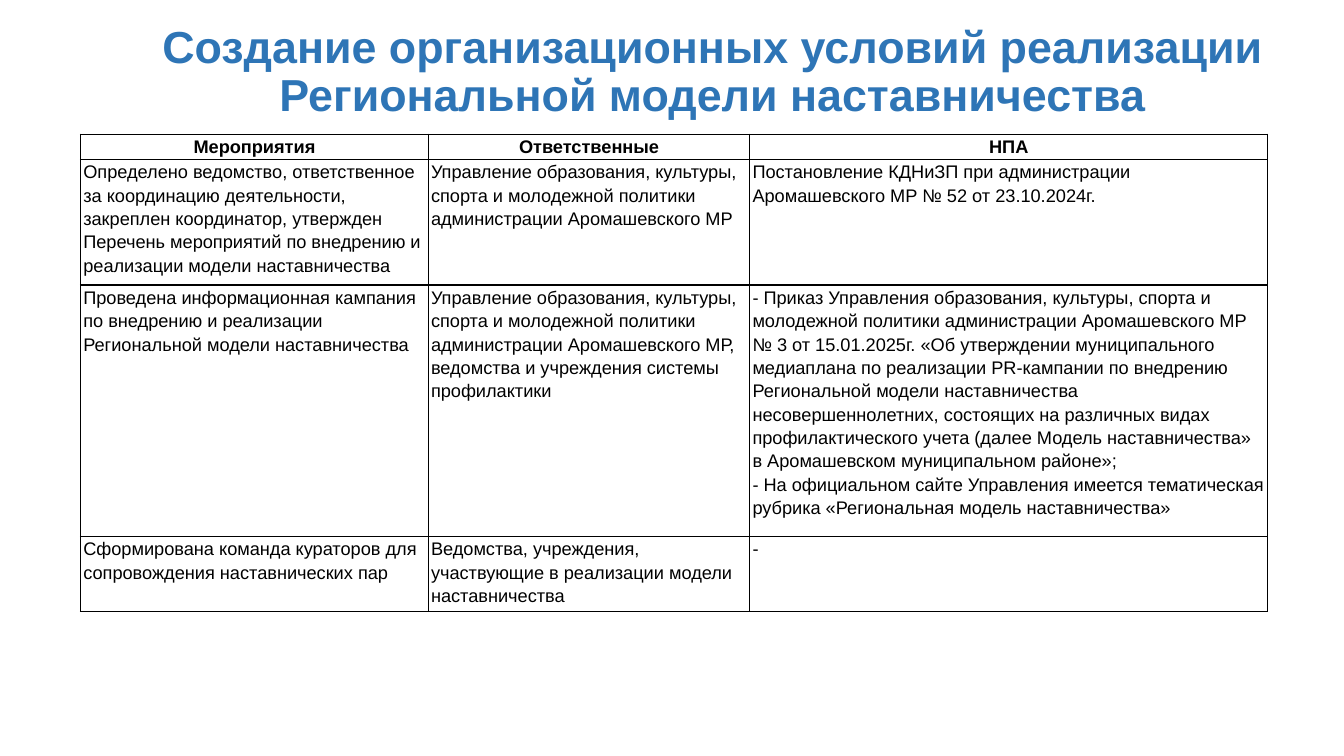
import pptx
import pptx.util
import pptx.dml.color
import pptx.enum.text
import pptx.oxml
import pptx.oxml.ns
from lxml import etree

Cm = pptx.util.Cm
Pt = pptx.util.Pt
ALIGN = pptx.enum.text.PP_ALIGN
ANCHOR = pptx.enum.text.MSO_ANCHOR

COLORS = {"title": "2E75B6", "text": "000000", "border": "000000"}
FONT = "Arial"

TITLE = "Создание организационных условий реализации Региональной модели наставничества"
HEADINGS = ["Мероприятия", "Ответственные", "НПА"]
MEASURES = [
    ["Определено ведомство, ответственное за координацию деятельности, закреплен "
     "координатор, утвержден Перечень мероприятий по внедрению и реализации "
     "модели наставничества",
     "Управление образования, культуры, спорта и молодежной политики "
     "администрации Аромашевского МР",
     "Постановление КДНиЗП при администрации Аромашевского МР № 52 от 23.10.2024г."],
    ["Проведена информационная кампания по внедрению и реализации "
     "Региональной модели наставничества",
     "Управление образования, культуры, спорта и молодежной политики администрации "
     "Аромашевского МР, ведомства и учреждения системы профилактики",
     "- Приказ Управления образования, культуры, спорта и молодежной политики "
     "администрации Аромашевского МР № 3 от 15.01.2025г. «Об утверждении "
     "муниципального медиаплана по реализации PR-кампании по внедрению Региональной "
     "модели наставничества несовершеннолетних, состоящих на различных видах "
     "профилактического учета (далее Модель наставничества» в Аромашевском "
     "муниципальном районе»;\n"
     "- На официальном сайте Управления имеется тематическая рубрика "
     "«Региональная модель наставничества»"],
    ["Сформирована команда кураторов для сопровождения наставнических пар",
     "Ведомства, учреждения, участвующие в реализации модели наставничества",
     "-"],
]
COLUMN_SHARES = [3.45, 3.19, 5.14]
ROW_HEIGHTS = [0.48, 1.88, 4.24, 0.94]  # minimum heights, rows grow with their text


def format_text(frame, size, color, bold, align, spacing):
    for paragraph in frame.paragraphs:
        paragraph.alignment = align
        paragraph.line_spacing = spacing
        for run in paragraph.runs:
            run.font.name = FONT
            run.font.size = Pt(size)
            run.font.bold = bold
            run.font.color.rgb = pptx.dml.color.RGBColor.from_string(color)


def add_borders(cell):
    properties = cell._tc.get_or_add_tcPr()
    qn = pptx.oxml.ns.qn
    for position, side in enumerate(("a:lnL", "a:lnR", "a:lnT", "a:lnB")):
        line = etree.Element(qn(side), w=str(Pt(1)))
        fill = etree.SubElement(line, qn("a:solidFill"))
        etree.SubElement(fill, qn("a:srgbClr"), val=COLORS["border"])
        properties.insert(position, line)


def add_title(slide, left, top, width, height):
    title = slide.shapes.add_textbox(Cm(left), Cm(top), Cm(width), Cm(height))
    frame = title.text_frame
    frame.word_wrap = True
    frame.vertical_anchor = ANCHOR.MIDDLE
    frame.text = TITLE
    format_text(frame, 32, COLORS["title"], True, ALIGN.CENTER, 0.9)


def add_measures(slide, left, top, width):
    rows = [HEADINGS] + MEASURES
    measures = slide.shapes.add_table(
        len(rows), len(HEADINGS), Cm(left), Cm(top), Cm(width), Cm(sum(ROW_HEIGHTS))
    ).table
    measures.horz_banding = False
    for column, share in zip(measures.columns, COLUMN_SHARES):
        column.width = Cm(width * share / sum(COLUMN_SHARES))
    for row, height in zip(measures.rows, ROW_HEIGHTS):
        row.height = Cm(height)

    for r, texts in enumerate(rows):
        heading = r == 0
        for c, text in enumerate(texts):
            cell = measures.cell(r, c)
            cell.margin_left = cell.margin_right = Cm(0.07)
            cell.margin_top = cell.margin_bottom = 0
            cell.vertical_anchor = ANCHOR.TOP
            cell.fill.background()
            cell.text_frame.text = text
            format_text(cell.text_frame, 13, COLORS["text"], heading,
                        ALIGN.CENTER if heading else ALIGN.LEFT, 1.15)
            add_borders(cell)


def main():
    deck = pptx.Presentation()
    deck.slide_width, deck.slide_height = Cm(33.87), Cm(19.05)
    slide = deck.slides.add_slide(deck.slide_layouts[6])

    # Heading
    add_title(slide, left=2.06, top=0, width=31.81, height=3.68)
    # Table of measures
    add_measures(slide, left=2.03, top=3.38, width=29.92)

    deck.save("out.pptx")


if __name__ == "__main__":
    main()
